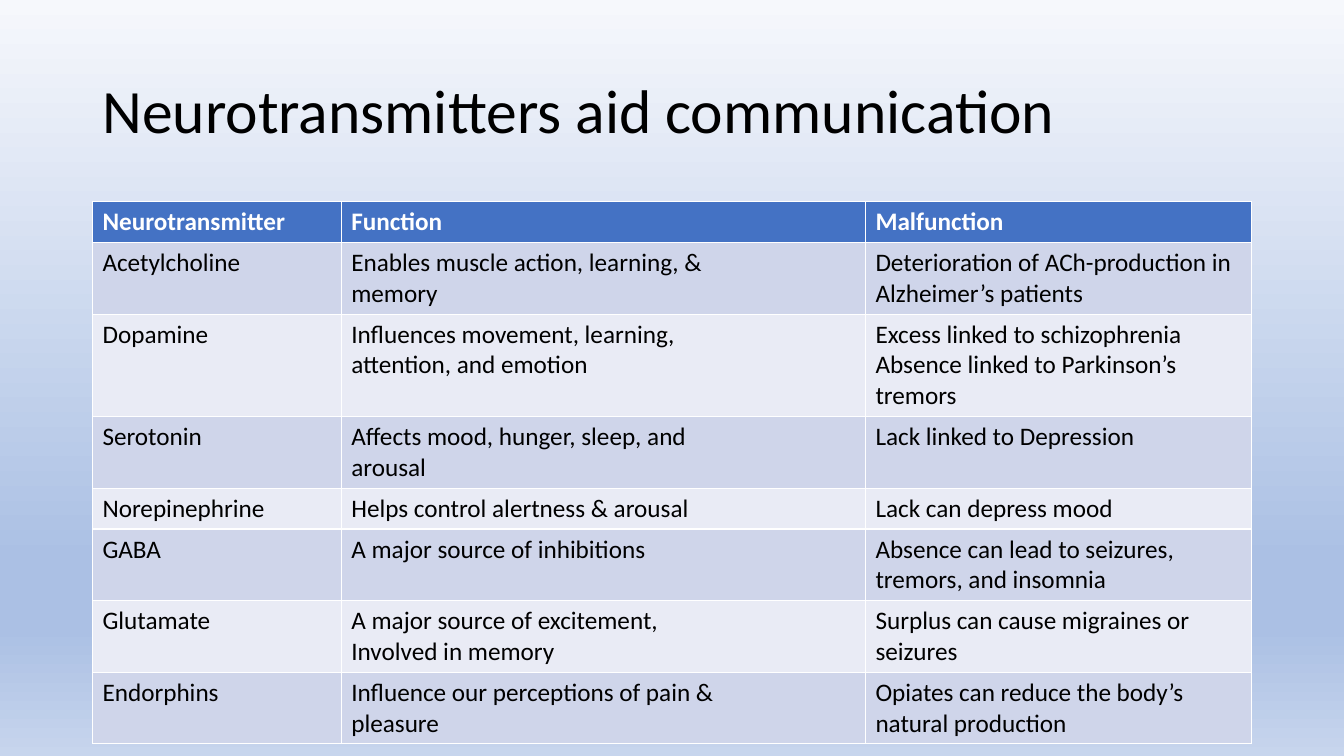
"""Build a slide with a table of neurotransmitters, their functions and malfunctions."""
from dataclasses import astuple, dataclass
from typing import Any

from lxml.etree import SubElement
from pptx import Presentation
from pptx.dml.color import RGBColor
from pptx.enum.text import MSO_ANCHOR as Anchor, PP_ALIGN as Align
from pptx.oxml.ns import qn
from pptx.slide import Slide
from pptx.table import _Cell as Cell
from pptx.text.text import TextFrame
from pptx.util import Cm, Pt

BLACK = RGBColor(0x00, 0x00, 0x00)
WHITE = RGBColor(0xFF, 0xFF, 0xFF)
HEADER_BLUE = RGBColor(0x44, 0x72, 0xC4)
ODD_BAND = RGBColor(0xCF, 0xD5, 0xEA)
EVEN_BAND = RGBColor(0xE9, 0xEB, 0xF5)
SKY_PALE = RGBColor(0xF6, 0xF8, 0xFC)
SKY_DEEP = RGBColor(0xAB, 0xC0, 0xE4)
SKY_LIGHT = RGBColor(0xC7, 0xD5, 0xED)
SKY_STOPS = ((0, SKY_PALE), (74, SKY_DEEP), (83, SKY_DEEP), (100, SKY_LIGHT))

TITLE_FONT = {"name": "Calibri", "size": Pt(44), "bold": False}
HEADER_FONT = {"name": "Calibri", "size": Pt(18), "bold": True}
BODY_FONT = {"name": "Calibri", "size": Pt(18), "bold": False}
TITLE_BOX = {"left": Cm(2.33), "top": Cm(1.01), "width": Cm(29.21), "height": Cm(3.68)}
COLUMN_WIDTHS = (Cm(6.27), Cm(13.21), Cm(9.73))
ROW_HEIGHT = Cm(1.03)


@dataclass(frozen=True)
class Entry:
    """One table row."""
    transmitter: str
    function: str
    malfunction: str


ENTRIES = (
    Entry("Neurotransmitter", "Function", "Malfunction"),
    Entry("Acetylcholine", "Enables muscle action, learning, &\nmemory",
          "Deterioration of ACh-production in Alzheimer’s patients"),
    Entry("Dopamine", "Influences movement, learning,\nattention, and emotion",
          "Excess linked to schizophrenia\nAbsence linked to Parkinson’s tremors"),
    Entry("Serotonin", "Affects mood, hunger, sleep, and\narousal",
          "Lack linked to Depression"),
    Entry("Norepinephrine", "Helps control alertness & arousal", "Lack can depress mood"),
    Entry("GABA", "A major source of inhibitions",
          "Absence can lead to seizures, tremors, and insomnia"),
    Entry("Glutamate", "A major source of excitement,\nInvolved in memory",
          "Surplus can cause migraines or seizures"),
    Entry("Endorphins", "Influence our perceptions of pain &\npleasure",
          "Opiates can reduce the body’s natural production"),
)


def set_all(target: Any, values: dict[str, Any]) -> None:
    """Set every named attribute on the target."""
    for attribute, value in values.items():
        setattr(target, attribute, value)


def write(frame: TextFrame, text: str, font: dict[str, Any], color: RGBColor) -> None:
    """Fill a text frame with formatted, left-aligned paragraphs."""
    frame.text = text
    for paragraph in frame.paragraphs:
        paragraph.alignment = Align.LEFT
        for run in paragraph.runs:
            set_all(run.font, font)
            run.font.color.rgb = color


def paint_sky(slide: Slide) -> None:
    """Give the slide its vertical gradient background."""
    sky = slide.background.fill
    sky.gradient()
    sky.gradient_angle = 270
    stops = next(slide.element.iter(qn("a:gsLst")))
    for stop in list(stops):
        stops.remove(stop)
    for percent, color in SKY_STOPS:
        stop = SubElement(stops, qn("a:gs"), pos=str(percent * 1000))
        SubElement(stop, qn("a:srgbClr"), val=str(color))


def add_title(slide: Slide) -> None:
    """Place and format the title placeholder."""
    title = slide.shapes.title
    set_all(title, TITLE_BOX)
    write(title.text_frame, "Neurotransmitters aid communication", TITLE_FONT, BLACK)
    title.text_frame.vertical_anchor = Anchor.MIDDLE
    title.text_frame.paragraphs[0].line_spacing = 0.9


def fill_cell(cell: Cell, text: str, row: int) -> None:
    """Write one cell in the style of its row."""
    cell.fill.solid()
    if row == 0:
        cell.fill.fore_color.rgb = HEADER_BLUE
        write(cell.text_frame, text, HEADER_FONT, WHITE)
    else:
        cell.fill.fore_color.rgb = ODD_BAND if row % 2 else EVEN_BAND
        write(cell.text_frame, text, BODY_FONT, BLACK)


def add_transmitters(slide: Slide) -> None:
    """Add the table of neurotransmitters."""
    transmitters = slide.shapes.add_table(
        len(ENTRIES), len(COLUMN_WIDTHS), TITLE_BOX["left"], Cm(5.08),
        sum(COLUMN_WIDTHS), ROW_HEIGHT * len(ENTRIES)).table
    for column, width in zip(transmitters.columns, COLUMN_WIDTHS):
        column.width = width
    for index, (row, entry) in enumerate(zip(transmitters.rows, ENTRIES)):
        row.height = ROW_HEIGHT
        for cell, text in zip(row.cells, astuple(entry)):
            fill_cell(cell, text, index)


def main() -> None:
    """Build and save the presentation."""
    deck = Presentation()
    set_all(deck, {"slide_width": Cm(33.87), "slide_height": Cm(19.05)})
    slide = deck.slides.add_slide(deck.slide_layouts.get_by_name("Title Only"))
    paint_sky(slide)
    add_title(slide)
    add_transmitters(slide)
    deck.save("out.pptx")


if __name__ == "__main__":
    main()
